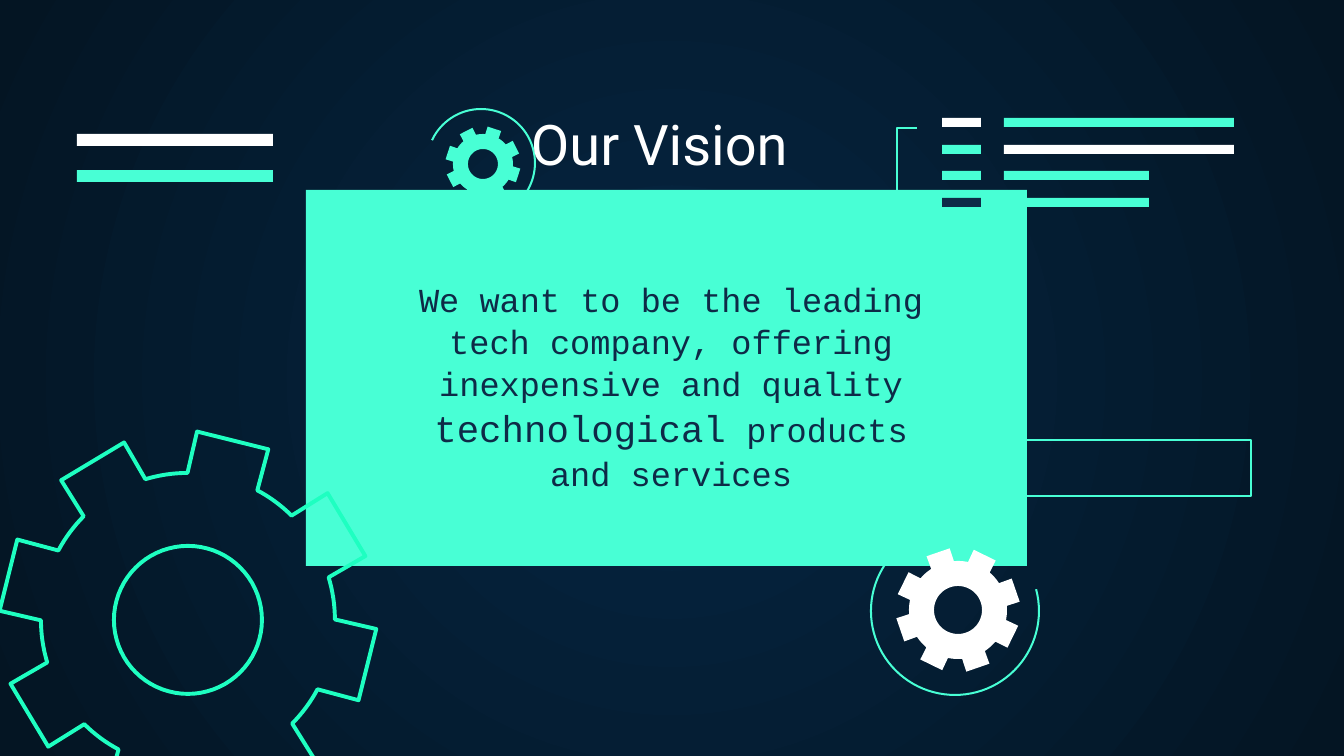
from dataclasses import dataclass
from math import asin, cos, pi, radians, sin
from typing import Optional

from lxml import etree
from pptx import Presentation
from pptx import util as u
from pptx.dml import color as c
from pptx.enum import shapes as s
from pptx.enum import text as t
from pptx.oxml import ns

EMU_PER_PX = 9144000 / 1344


@dataclass(frozen=True)
class Theme:
    mint: str = "48FFD5"
    bright_mint: str = "1EFFC1"
    white: str = "FFFFFF"
    navy: str = "0E2A47"
    glow: str = "052643"
    edge: str = "041523"
    title_font: str = "Roboto"
    body_font: str = "Courier New"
    title_size: int = 30
    body_size: int = 18
    emphasis_size: int = 20
    thin: float = 1.09
    thick: float = 2.1


@dataclass(frozen=True)
class Box:
    left: int
    top: int
    width: int
    height: int


@dataclass(frozen=True)
class Bar:
    box: Box
    color: str


@dataclass(frozen=True)
class Gear:
    x: int
    y: int
    tip: int
    root: int
    half_tooth: int
    hole: int
    phase: int
    fill: Optional[str] = None
    line: Optional[str] = None


@dataclass(frozen=True)
class Arc:
    x: int
    y: int
    radius: int
    start: int
    end: int


THEME = Theme()


def px(value: float) -> int:
    return round(value * EMU_PER_PX)


def place(box: Box) -> tuple:
    return px(box.left), px(box.top), px(box.width), px(box.height)


def paint(shape, fill: Optional[str] = None, line: Optional[str] = None,
          width: float = THEME.thin):
    shape.shadow.inherit = False
    if fill:
        shape.fill.solid()
        shape.fill.fore_color.rgb = c.RGBColor.from_string(fill)
    else:
        shape.fill.background()
    if line:
        shape.line.color.rgb = c.RGBColor.from_string(line)
        shape.line.width = u.Pt(width)
    else:
        shape.line.fill.background()


def draw_rect(page, box: Box, fill: Optional[str] = None,
              line: Optional[str] = None):
    paint(page.shapes.add_shape(s.MSO_SHAPE.RECTANGLE, *place(box)), fill, line)


def draw_arc(page, arc: Arc):
    side = 2 * arc.radius
    box = Box(arc.x - arc.radius, arc.y - arc.radius, side, side)
    shape = page.shapes.add_shape(s.MSO_SHAPE.ARC, *place(box))
    # Arc angles are stored in 60000ths of a degree, adjustments in 100000ths
    shape.adjustments[0] = arc.start * 0.6
    shape.adjustments[1] = arc.end * 0.6
    paint(shape, line=THEME.mint)


def draw_gear(page, gear: Gear):
    def point(radius: float, angle: float) -> tuple:
        return (px(gear.x + radius * cos(angle)), px(gear.y + radius * sin(angle)))

    teeth, steps = 8, 8
    pitch = 2 * pi / teeth
    root_half = asin(gear.half_tooth / gear.root)
    tip_half = asin(gear.half_tooth / gear.tip)
    corner = gear.tip / cos(tip_half)
    gap = pitch - 2 * root_half
    outline = []
    for tooth in range(teeth):
        middle = radians(gear.phase) + tooth * pitch
        outline += [point(corner, middle - tip_half), point(corner, middle + tip_half)]
        outline += [point(gear.root, middle + root_half + gap * step / steps)
                    for step in range(steps + 1)]
    hole = [point(gear.hole, -2 * pi * step / 72) for step in range(72)]

    builder = page.shapes.build_freeform(*outline[0])
    builder.add_line_segments(outline[1:], close=True)
    builder.move_to(*hole[0])
    builder.add_line_segments(hole[1:], close=True)
    paint(builder.convert_to_shape(), gear.fill, gear.line, THEME.thick)


def draw_text(page, box: Box, words: str, font: str, color: str, sizes: list,
              anchor, spacing: float = 1.0):
    """Write one centred paragraph; "|" parts the runs, one size for each."""
    frame = page.shapes.add_textbox(*place(box)).text_frame
    frame.word_wrap = True
    frame.vertical_anchor = anchor
    frame.margin_left = frame.margin_right = u.Inches(0.1)
    frame.margin_top = frame.margin_bottom = u.Inches(0.1)
    para = frame.paragraphs[0]
    para.alignment = t.PP_ALIGN.CENTER
    para.line_spacing = spacing
    for part, size in zip(words.split("|"), sizes):
        span = para.add_run()
        span.text = part
        span.font.name = font
        span.font.size = u.Pt(size)
        span.font.color.rgb = c.RGBColor.from_string(color)


def draw_background(page):
    fill = page.background.fill
    fill.gradient()
    for stop, color, position in zip(fill.gradient_stops,
                                     (THEME.glow, THEME.edge), (0, 1)):
        stop.color.rgb = c.RGBColor.from_string(color)
        stop.position = position
    # Turn the linear gradient into a circular one
    linear = next(page.element.iter(ns.qn("a:lin")))
    circle = etree.Element(ns.qn("a:path"), {"path": "circle"})
    etree.SubElement(circle, ns.qn("a:fillToRect"),
                     {side: "50000" for side in "ltrb"})
    linear.getparent().replace(linear, circle)


def main():
    deck = Presentation()
    deck.slide_width, deck.slide_height = px(1344), px(756)
    page = deck.slides.add_slide(deck.slide_layouts[6])
    draw_background(page)

    # Central panel
    draw_rect(page, Box(306, 190, 721, 376), THEME.mint)

    # Arcs and gears
    for arc in (Arc(481, 163, 54, 205, 100), Arc(955, 611, 84, 345, 233)):
        draw_arc(page, arc)
    for gear in (
        Gear(188, 620, 185, 147, 36, 74, 14, line=THEME.bright_mint),
        Gear(958, 610, 61, 49, 12, 24, 26, fill=THEME.white),
        Gear(483, 164, 37, 30, 7, 15, 18, fill=THEME.mint),
    ):
        draw_gear(page, gear)

    # Code-like bars on the right, a short and a long one in each row
    rows = ((THEME.white, THEME.mint, 230), (THEME.mint, THEME.white, 230),
            (THEME.mint, THEME.mint, 145), (THEME.navy, THEME.mint, 145))
    bars = []
    for row, (short_color, long_color, length) in enumerate(rows):
        top = 118 + round(row * 26.6)
        bars += [Bar(Box(942, top, 39, 9), short_color),
                 Bar(Box(1004, top, length, 9), long_color)]

    # Pair of bars on the left
    bars += [Bar(Box(77, 134, 196, 12), THEME.white),
             Bar(Box(77, 170, 196, 12), THEME.mint)]
    for bar in bars:
        draw_rect(page, bar.box, bar.color)

    # Bracket and outlined box
    bracket = page.shapes.build_freeform(px(917), px(209))
    bracket.add_line_segments([(px(x), px(y)) for x, y in
                               ((897, 209), (897, 128), (917, 128))], close=False)
    paint(bracket.convert_to_shape(), line=THEME.mint)
    draw_rect(page, Box(968, 440, 283, 56), line=THEME.mint)

    # Title and statement
    draw_text(page, Box(400, -95, 519, 285), "Our Vision", THEME.title_font,
              THEME.white, [THEME.title_size], t.MSO_ANCHOR.BOTTOM)
    draw_text(page, Box(400, 263, 542, 208),
              "We want to be the leading tech company, offering inexpensive "
              "and quality |technological| products and services",
              THEME.body_font, THEME.navy,
              [THEME.body_size, THEME.emphasis_size, THEME.body_size],
              t.MSO_ANCHOR.TOP, 1.05)

    deck.save("out.pptx")


if __name__ == "__main__":
    main()
